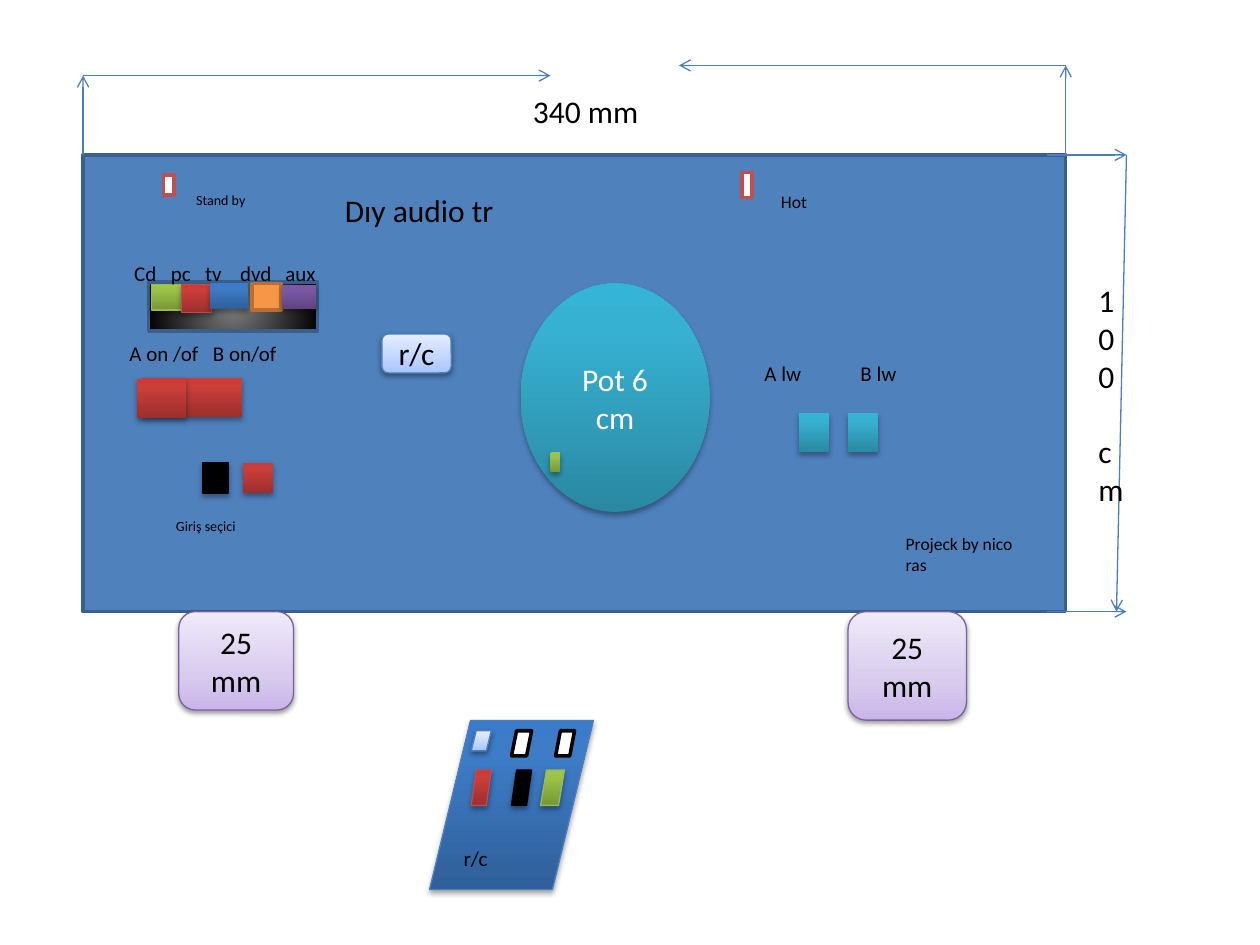
"""Build the front panel sketch of a home-made audio amplifier with its remote control."""
from pptx import Presentation
from pptx.dml.color import RGBColor
from pptx.enum.shapes import MSO_CONNECTOR, MSO_SHAPE
from pptx.enum.text import MSO_ANCHOR, MSO_AUTO_SIZE, PP_ALIGN
from pptx.oxml import parse_xml
from pptx.oxml.ns import nsdecls, qn
from pptx.util import Pt

THEME = {
    "font": "Calibri",
    "sizes": {"tiny": 8, "small": 10, "label": 12, "large": 18},
    "text": "000000",
    "light text": "FFFFFF",
    "dimension": "4B7EBC",
    "solids": {"panel": "4F81BD", "white": "FFFFFF", "black": "000000", "orange": "F79646"},
    "gradients": {
        "teal": ((0, "2A88A2"), (80, "37B1D2"), (100, "34B4D6")),
        "green": ((0, "779737"), (80, "9BC348"), (100, "9DC746")),
        "red": ((0, "9C2F2D"), (80, "CB3E3A"), (100, "CE3B37")),
        "blue": ((0, "2F5F99"), (80, "3D7CC7"), (100, "3A7CCB")),
        "purple": ((0, "5F4480"), (80, "7B58A6"), (100, "7C57A8")),
        "lilac": ((0, "C9B5E8"), (35, "D8CBEE"), (100, "F0EAF9")),
        "ice": ((0, "A4C4FF"), (35, "BFD4FF"), (100, "E6EEFF")),
        "glow": ((0, "7F7F7F"), (100, "000000")),
    },
    "edges": {
        "frame": ("3A5F8C", 2), "led": ("C0504D", 2), "amber": ("B76F34", 2),
        "bold": ("000000", 2), "black": ("000000", 0.75), "lilac": ("7D60A0", 0.75),
        "blue": ("4B7EBC", 0.75), "green": ("98B955", 0.75), "red": ("BF4C48", 0.75),
    },
    "pale": ("lilac", "ice"),
}

BOX = MSO_SHAPE.FLOWCHART_PROCESS
ROUND = MSO_SHAPE.FLOWCHART_ALTERNATE_PROCESS
SLANT = MSO_SHAPE.PARALLELOGRAM

PANEL = LEFT, TOP, WIDTH, HEIGHT = 47.5, 88.5, 561.5, 261
RIGHT, BOTTOM = LEFT + WIDTH, TOP + HEIGHT

PARTS = [
    (BOX, "panel", "frame", PANEL, ""),
    (MSO_SHAPE.OVAL, "teal", None, (297.5, 162, 108, 130.5), "Pot 6 cm"),
    (ROUND, "green", None, (314.5, 258.5, 5.8, 11.5), ""),
    (BOX, "white", "led", (93.5, 100, 5.8, 11.5), ""),
    (BOX, "black", "black", (116, 264.5, 14.4, 17.3), ""),
    (BOX, "red", None, (139, 264.5, 17.3, 17.3), ""),
    (ROUND, "lilac", "lilac", (102.2, BOTTOM, 65.5, 56.2), "25 mm"),
    (ROUND, "lilac", "lilac", (484.6, BOTTOM, 67.7, 62), "25 mm"),
    (BOX, "white", "led", (424, 98.5, 5.8, 14.4), ""),
    (ROUND, "ice", "blue", (218.2, 190.8, 39.6, 22.3), "r/c"),
    (BOX, "teal", None, (456.5, 236.2, 17.3, 22.3), ""),
    (BOX, "teal", None, (484.6, 236.2, 17.3, 22.3), ""),
    (BOX, "glow", "frame", (85, 161.3, 96.5, 28), ""),
    (BOX, "green", "green", (86.4, 162.7, 17.3, 14.4), ""),
    (BOX, "red", "red", (103.7, 162.7, 17.3, 15.8), ""),
    (BOX, "blue", None, (120.2, 162, 21.6, 14.4), ""),
    (BOX, "orange", "amber", (144, 162, 16.6, 15.1), ""),
    (BOX, "purple", None, (161.3, 162.7, 19.4, 13.7), ""),
    (BOX, "red", None, (81.4, 216, 56.9, 22.3), ""),
    (BOX, "red", None, (78.5, 216.7, 28, 22.3), ""),
    (SLANT, "blue", "blue", (245.5, 411.8, 93.6, 96.5), ""),
    (SLANT, "ice", "blue", (269.3, 417.6, 11.5, 11.5), ""),
    (SLANT, "white", "bold", (292.3, 417.6, 11.5, 14.4), ""),
    (SLANT, "white", "bold", (317.5, 417.6, 10.8, 14.4), ""),
    (SLANT, "red", "red", (269.3, 440, 11.5, 20.2), ""),
    (SLANT, "black", "black", (292.3, 440, 11.5, 20.2), ""),
    (SLANT, "green", "green", (308.9, 440, 13.7, 20.2), ""),
]

LABELS = [
    ("Stand by", "tiny", (105, 105.8, 51.1, 17.3)),
    ("Giriş seçici", "tiny", (93.5, 292.3, 62.6, 17.3)),
    ("100 cm", "large", (620.6, 157, 22.3, 159.8)),
    ("Hot", "small", (439.2, 105.8, 33.8, 31.7)),
    ("A lw", "label", (429.8, 202.3, 43.2, 21.6)),
    ("B lw", "label", (484.6, 202.3, 51.1, 21.6)),
    ("Dıy audio tr", "large", (190, 105.8, 108, 28.8)),
    ("Projeck by nico ras", "small", (510.5, 301, 76.3, 31.7)),
    ("340 mm", "large", (297.5, 49, 129.6, 28.8)),
    ("r/c", "label", (257.8, 479.5, 51.1, 21.6)),
]

TABBED_LABELS = [
    (("Cd", "pc", "tv", "dvd", "aux"), (42.5, 145.4, 147.6, 21.6), 34.2, (21, 40.5, 60.5, 86.4)),
    (("A on /of", "B on/of"), (48.2, 190.8, 118.8, 21.6), 25.8, (47.7,)),
]

DIMENSIONS = [
    ((598.3, TOP), (643.7, TOP)),
    ((598.3, BOTTOM), (643.7, BOTTOM)),
    ((643.7, TOP), (638, BOTTOM)),
    ((LEFT, TOP), (LEFT, 43.2)),
    ((RIGHT, TOP), (RIGHT, 37.4)),
    ((LEFT, 43.2), (314.6, 43.2)),
    ((RIGHT, 37.4), (388, 37.4)),
]


def points(values):
    return [Pt(value) for value in values]


def add_run(paragraph, text, size, color):
    run = paragraph.add_run()
    run.text = text
    run.font.name = THEME["font"]
    run.font.size = Pt(THEME["sizes"][size])
    run.font.color.rgb = RGBColor.from_string(color)


def paint(shape, fill):
    if fill in THEME["solids"]:
        shape.fill.solid()
        shape.fill.fore_color.rgb = RGBColor.from_string(THEME["solids"][fill])
        return
    shape.fill.gradient()
    stops = "".join(
        f'<a:gs pos="{position * 1000}"><a:srgbClr val="{color}"/></a:gs>'
        for position, color in THEME["gradients"][fill]
    )
    direction = '<a:lin ang="16200000" scaled="0"/>'
    if fill == "glow":
        direction = '<a:path path="circle"><a:fillToRect l="50000" t="50000" r="50000" b="50000"/></a:path>'
    gradient = parse_xml(
        f'<a:gradFill {nsdecls("a")} rotWithShape="1"><a:gsLst>{stops}</a:gsLst>{direction}</a:gradFill>'
    )
    properties = shape._element.spPr
    properties.replace(properties.find(qn("a:gradFill")), gradient)


def add_shadow(shape, pale):
    distance, alpha = (1.6, 38) if pale else (1.8, 35)
    shape._element.spPr.find(qn("a:effectLst")).append(parse_xml(
        f'<a:outerShdw {nsdecls("a")} blurRad="{Pt(3.1)}" dist="{Pt(distance)}" dir="5400000" '
        f'rotWithShape="0"><a:srgbClr val="000000"><a:alpha val="{alpha * 1000}"/></a:srgbClr></a:outerShdw>'
    ))


def add_part(slide, form, fill, edge, box, text):
    shape = slide.shapes.add_shape(form, *points(box))
    paint(shape, fill)
    color, width = THEME["edges"].get(edge, (None, 0))
    if color:
        shape.line.color.rgb = RGBColor.from_string(color)
        shape.line.width = Pt(width)
    else:
        shape.line.fill.background()
    shape.shadow.inherit = False
    if width < 2:
        add_shadow(shape, fill in THEME["pale"])
    if text:
        shape.text_frame.vertical_anchor = MSO_ANCHOR.MIDDLE
        paragraph = shape.text_frame.paragraphs[0]
        paragraph.alignment = PP_ALIGN.CENTER
        add_run(paragraph, text, "large", THEME["light text" if fill == "teal" else "text"])


def add_label(slide, text, size, box):
    frame = slide.shapes.add_textbox(*points(box)).text_frame
    frame.word_wrap = True
    frame.auto_size = MSO_AUTO_SIZE.SHAPE_TO_FIT_TEXT
    add_run(frame.paragraphs[0], text, size, THEME["text"])
    return frame


def add_tabbed_label(slide, words, box, inset, stops):
    frame = add_label(slide, "\t".join(words), "label", box)
    frame.margin_left = Pt(inset)
    tabs = "".join(f'<a:tab pos="{Pt(stop)}" algn="l"/>' for stop in stops)
    frame.paragraphs[0]._p.get_or_add_pPr().append(
        parse_xml(f'<a:tabLst {nsdecls("a")}>{tabs}</a:tabLst>')
    )


def add_dimension(slide, start, end):
    connector = slide.shapes.add_connector(MSO_CONNECTOR.STRAIGHT, *points(start + end))
    connector.line.color.rgb = RGBColor.from_string(THEME["dimension"])
    connector.line.width = Pt(0.75)
    connector.line._get_or_add_ln().append(parse_xml(f'<a:tailEnd {nsdecls("a")} type="arrow"/>'))
    connector._element.spPr.append(parse_xml(f'<a:effectLst {nsdecls("a")}/>'))


def main():
    presentation = Presentation()
    presentation.slide_width, presentation.slide_height = points((720, 540))
    slide = presentation.slides.add_slide(presentation.slide_layouts[6])
    for builder, items in (
        (add_part, PARTS),
        (add_dimension, DIMENSIONS),
        (add_label, LABELS),
        (add_tabbed_label, TABBED_LABELS),
    ):
        for item in items:
            builder(slide, *item)
    presentation.save("out.pptx")


if __name__ == "__main__":
    main()
